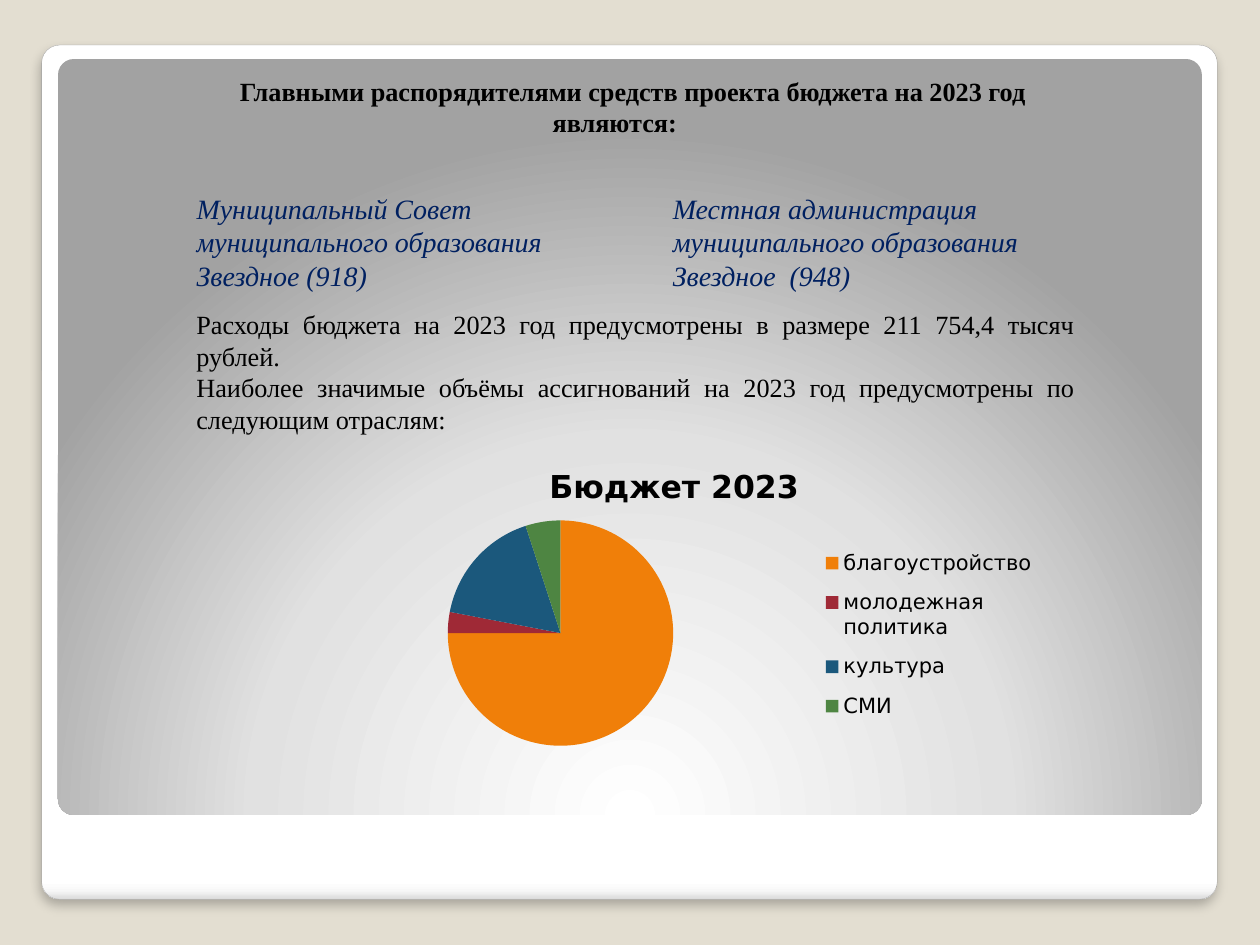
from lxml.etree import SubElement
from pptx import Presentation
from pptx.chart.data import CategoryChartData
from pptx.dml.color import RGBColor
from pptx.enum.chart import XL_CHART_TYPE, XL_LEGEND_POSITION
from pptx.enum.shapes import MSO_SHAPE
from pptx.enum.text import MSO_ANCHOR, MSO_AUTO_SIZE, PP_ALIGN
from pptx.oxml import parse_xml
from pptx.oxml.ns import nsdecls, qn
from pptx.util import Cm, Pt

COLORS = {
    "page": "E3DED1", "edge": "A4A4A4", "ink": "000000", "navy": "002060",
    "white": "FFFFFF", "mist": "F7F7F7", "rim": "DADADA",
    "pale": "E1E1E1", "gray": "A2A2A2",
}
SECTORS = [
    ("благоустройство", 75, "F07F09"),
    ("молодежная политика", 3, "9F2936"),
    ("культура", 17, "1B587C"),
    ("СМИ", 5, "4E8542"),
]
TITLE = {"name": "Times New Roman", "size": Pt(15), "bold": True}
MANAGER = {"name": "Times New Roman", "size": Pt(16), "italic": True}
PLAIN = {"name": "Times New Roman", "size": Pt(15)}
LINEAR = '<a:lin ang="5400000" scaled="0"/>'
RADIAL = ('<a:path path="circle"><a:fillToRect l="50000" t="175000" '
          'r="50000" b="-75000"/></a:path>')


def color(key):
    return RGBColor.from_string(COLORS[key])


def set_values(target, values):
    for name, value in values.items():
        setattr(target, name, value)


def place(shape, box):
    names = ("left", "top", "width", "height")
    set_values(shape, dict(zip(names, (Cm(length) for length in box))))


def add_card(page, box, level, stops, direction):
    """Rounded gradient card, kept behind the text at the given level."""
    card = page.shapes.add_shape(MSO_SHAPE.ROUNDED_RECTANGLE,
                                 *(Cm(length) for length in box))
    card.adjustments[0] = 0.021
    card.shadow.inherit = False
    card.line.fill.background()
    card.fill.background()
    marks = "".join(
        f'<a:gs pos="{place_percent * 1000}"><a:srgbClr val="{COLORS[key]}"/></a:gs>'
        for place_percent, key in stops)
    properties = card.element.spPr
    properties.replace(properties.find(qn("a:noFill")), parse_xml(
        f'<a:gradFill {nsdecls("a")} rotWithShape="1">'
        f'<a:gsLst>{marks}</a:gsLst>{direction}</a:gradFill>'))
    page.shapes.element.insert(2 + level, card.element)
    return card


def add_frame(page, box):
    """White outer frame with a soft shadow and the gray panel inside it."""
    left, top, width, height = box
    frame = add_card(page, box, 0, [(0, "white"), (98, "white"),
                                    (99, "mist"), (100, "rim")], LINEAR)
    frame.line.color.rgb = color("edge")
    frame.line.width = Pt(0.16)
    effects = frame.element.spPr.find(qn("a:effectLst"))
    effects.append(parse_xml(
        f'<a:outerShdw {nsdecls("a")} blurRad="{Pt(6)}" dist="{Pt(4)}" '
        f'dir="5400000" algn="tl" rotWithShape="0">'
        f'<a:srgbClr val="{COLORS["ink"]}"><a:alpha val="25000"/></a:srgbClr>'
        f'</a:outerShdw>'))
    panel = (left + 0.33, top + 0.28, width - 0.64, height - 1.98)
    add_card(page, panel, 1, [(0, "white"), (55, "pale"), (100, "gray")], RADIAL)


def write(shape, box, lines, font, ink="ink", align=PP_ALIGN.LEFT, indent=0):
    """Fill a text shape with unbulleted paragraphs."""
    place(shape, box)
    frame = shape.text_frame
    set_values(frame, {"word_wrap": True, "auto_size": MSO_AUTO_SIZE.NONE,
                       "vertical_anchor": MSO_ANCHOR.TOP})
    frame.text = "\n".join(lines)
    for para in frame.paragraphs:
        set_values(para, {"alignment": align, "space_before": Pt(0)})
        layout = para._p.get_or_add_pPr()
        layout.set("marL", "0")
        layout.set("indent", str(Cm(indent)))
        SubElement(layout, qn("a:buNone"))
        span = para.runs[0]
        set_values(span.font, font)
        span.font.color.rgb = color(ink)


def fill_title(page, box):
    title = page.shapes.title
    write(title, box,
          ["Главными распорядителями средств проекта бюджета на 2023 год являются:"],
          TITLE, align=PP_ALIGN.CENTER, indent=0.74)
    set_values(title.text_frame, {"margin_top": Cm(0.8), "margin_bottom": 0})


def fill_managers(page, box):
    """Two columns naming the managers of the funds."""
    left, top, width, height = box
    managers = [
        ["Муниципальный Совет муниципального образования", "Звездное (918)"],
        ["Местная администрация муниципального образования", "Звездное  (948)"],
    ]
    for column, lines in enumerate(managers):
        write(page.placeholders[column + 1], (left + column * 9.6, top, width, height),
              lines, MANAGER, "navy")


def add_spending(page, box):
    note = page.shapes.add_textbox(0, 0, 0, 0)
    write(note, box, [
        "Расходы бюджета на 2023 год предусмотрены в размере 211 754,4 тысяч рублей.",
        "Наиболее значимые объёмы ассигнований на 2023 год предусмотрены по "
        "следующим отраслям:",
    ], PLAIN, align=PP_ALIGN.JUSTIFY)


def chart_layout(x, y, width, height, inner=False):
    target = '<c:layoutTarget val="inner"/>' if inner else ""
    sizes = "".join(f'<c:{tag} val="{value}"/>' for tag, value in
                    zip("xywh", (x, y, width, height)))
    return parse_xml(
        f'<c:layout {nsdecls("c")}><c:manualLayout>{target}'
        f'<c:xMode val="edge"/><c:yMode val="edge"/>{sizes}'
        f'</c:manualLayout></c:layout>')


def add_budget_chart(page, box):
    names, values, fills = zip(*SECTORS)
    data = CategoryChartData()
    data.categories = names
    data.add_series("Бюджет 2023", values)
    chart = page.shapes.add_chart(XL_CHART_TYPE.PIE,
                                  *(Cm(length) for length in box), data).chart
    set_values(chart.font, {"name": "DejaVu Sans", "size": Pt(18)})
    chart.font.color.rgb = color("ink")

    # Title
    chart.has_title = True
    chart.chart_title.text_frame.text = "Бюджет 2023"
    span = chart.chart_title.text_frame.paragraphs[0].runs[0]
    set_values(span.font, {"name": "DejaVu Sans", "size": Pt(18), "bold": True})

    # Slices
    plot = chart.plots[0]
    plot.vary_by_categories = True
    for index, fill in enumerate(fills):
        slice_fill = plot.series[0].points[index].format.fill
        slice_fill.solid()
        slice_fill.fore_color.rgb = RGBColor.from_string(fill)
    area = chart.element.chart.plotArea
    for old in area.findall(qn("c:layout")):
        area.remove(old)
    area.insert(0, chart_layout(0.21, 0.23, 0.29, 0.71, inner=True))

    # Legend
    chart.has_legend = True
    legend = chart.legend
    set_values(legend, {"position": XL_LEGEND_POSITION.RIGHT,
                        "include_in_layout": False})
    set_values(legend.font, {"name": "DejaVu Sans", "size": Pt(12)})
    for old in legend._element.findall(qn("c:layout")):
        legend._element.remove(old)
    legend._element.find(qn("c:legendPos")).addnext(
        chart_layout(0.68, 0.28, 0.29, 0.62))


def main():
    deck = Presentation()
    set_values(deck, {"slide_width": Cm(25.4), "slide_height": Cm(19.05)})
    page = deck.slides.add_slide(deck.slide_layouts[3])
    page.background.fill.solid()
    page.background.fill.fore_color.rgb = color("page")

    add_frame(page, (0.84, 0.91, 23.7, 17.22))
    fill_title(page, (3.1, 0.71, 18.59, 2.11))
    fill_managers(page, (3.71, 3.73, 8.94, 2.31))
    add_spending(page, (3.71, 6.1, 18.21, 2.82))
    add_budget_chart(page, (5.69, 9.02, 15.8, 6.4))
    deck.save("out.pptx")


if __name__ == "__main__":
    main()
